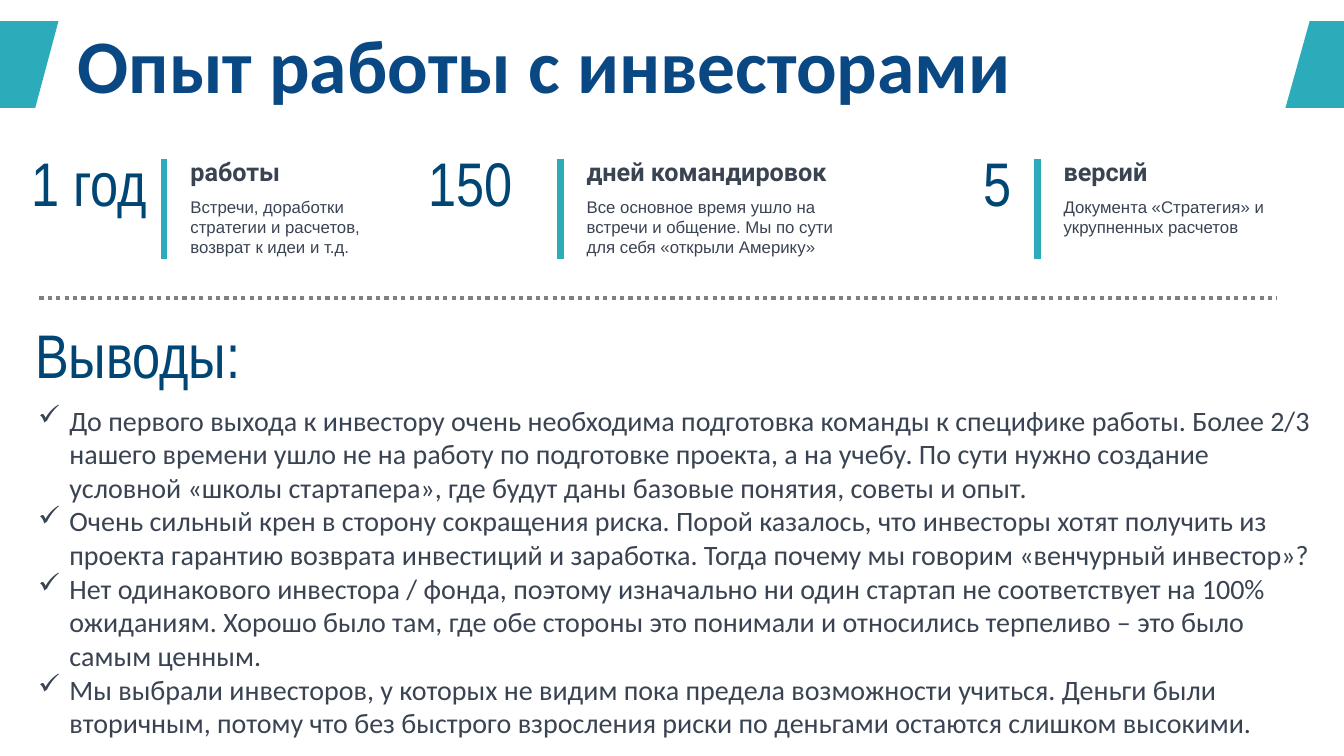
from pptx import Presentation, util as u
from pptx.dml.color import RGBColor
from pptx.enum import dml, shapes, text
from pptx.oxml.ns import qn
from lxml import etree

EMU_PER_PX = 9144
TEAL, NAVY, BLUE, SLATE, GRAY = "2CACBA", "0A4884", "004674", "3A4352", "808080"

STATS = [
    dict(value="1 год", label="работы", left=21, width=165, rule=163, detail_width=228,
         detail="Встречи, доработки стратегии и расчетов, возврат к идеи и т.д."),
    dict(value="150", label="дней командировок", left=415, width=165, rule=556, detail_width=283,
         detail="Все основное время ушло на встречи и общение. "
                "Мы по сути для себя «открыли Америку»"),
    dict(value="5", label="версий", left=887, width=126, rule=1029, detail_width=228,
         detail="Документа «Стратегия» и укрупненных расчетов",
         align=text.PP_ALIGN.RIGHT),
]

CONCLUSIONS = [
    "До первого выхода к инвестору очень необходима подготовка команды к специфике работы. "
    "Более 2/3 нашего времени ушло не на работу по подготовке проекта, а на учебу. "
    "По сути нужно создание условной «школы стартапера», где будут даны базовые понятия, "
    "советы и опыт.",
    "Очень сильный крен в сторону сокращения риска. Порой казалось, что инвесторы хотят "
    "получить из проекта гарантию возврата инвестиций и заработка. "
    "Тогда почему мы говорим «венчурный инвестор»?",
    "Нет одинакового инвестора / фонда, поэтому изначально ни один стартап не соответствует "
    "на 100% ожиданиям. Хорошо было там, где обе стороны это понимали и относились "
    "терпеливо – это было самым ценным.",
    "Мы выбрали инвесторов, у которых не видим пока предела возможности учиться. "
    "Деньги были вторичным, потому что без быстрого взросления риски по деньгами остаются "
    "слишком высокими.",
]


def px(length):
    return u.Emu(length * EMU_PER_PX)


def color(value):
    return RGBColor.from_string(value)


class Slide:
    def __init__(self, deck):
        self.page = deck.slides.add_slide(deck.slide_layouts[5])

    def set_text(self, box, lines, size, font, ink, bold=False, align=text.PP_ALIGN.LEFT):
        frame = box.text_frame
        frame.word_wrap = True
        frame.text = "\n".join(lines)
        for para in frame.paragraphs:
            para.alignment = align
            for span in para.runs:
                span.font.size = u.Pt(size)
                span.font.name = font
                span.font.bold = bold
                span.font.color.rgb = color(ink)
        return box

    def title(self, left, top, width, height, line):
        box = self.page.shapes.title
        box.left, box.top, box.width, box.height = map(px, (left, top, width, height))
        box.text_frame.auto_size = text.MSO_AUTO_SIZE.NONE
        box.text_frame.vertical_anchor = text.MSO_ANCHOR.MIDDLE
        self.set_text(box, [line], 54, "Calibri", NAVY, bold=True)

    def label(self, left, top, width, height, lines, size, font, ink, **style):
        box = self.page.shapes.add_textbox(*map(px, (left, top, width, height)))
        return self.set_text(box, lines, size, font, ink, **style)

    def bullets(self, left, top, width, height, lines, indent):
        box = self.label(left, top, width, height, lines, 20, "Calibri", SLATE)
        for para in box.text_frame.paragraphs:
            props = para._p.get_or_add_pPr()
            props.set("marL", str(px(indent)))
            props.set("indent", str(px(-indent)))
            etree.SubElement(props, qn("a:buChar")).set("char", "✓")

    def line(self, x1, y1, x2, y2, ink, weight, dash=None):
        rule = self.page.shapes.add_connector(
            shapes.MSO_CONNECTOR.STRAIGHT, *map(px, (x1, y1, x2, y2)))
        rule.line.color.rgb = color(ink)
        rule.line.width = u.Pt(weight)
        if dash:
            rule.line.dash_style = dash
        etree.SubElement(rule._element.spPr, qn("a:effectLst"))

    def polygon(self, points, fill):
        start, *rest = points
        builder = self.page.shapes.build_freeform(*start, scale=EMU_PER_PX)
        builder.add_line_segments(rest, close=True)
        shape = builder.convert_to_shape()
        shape.shadow.inherit = False
        shape.fill.solid()
        shape.fill.fore_color.rgb = color(fill)
        shape.line.fill.background()

    def stat(self, value, label, detail, left, width, rule, detail_width,
             align=text.PP_ALIGN.LEFT):
        self.label(left, 139, width, 84, [value], 44, "Arial Narrow", BLUE, align=align)
        self.line(rule, 158, rule, 257, TEAL, 4.5)
        self.label(rule + 16, 150, detail_width + 8, 40, [label], 18, "Roboto", SLATE, bold=True)
        self.label(rule + 16, 190, detail_width, 71, [detail], 12, "Arial", SLATE)


def main():
    deck = Presentation()
    deck.slide_width, deck.slide_height = px(1333), px(750)
    slide = Slide(deck)
    slide.polygon([(0, 21), (58, 21), (35, 107), (0, 107)], TEAL)
    slide.polygon([(1335, 107), (1275, 107), (1299, 21), (1335, 21)], TEAL)
    slide.title(67, 0, 1200, 125, "Опыт работы с инвесторами")
    for stat in STATS:
        slide.stat(**stat)
    slide.line(39, 296, 1267, 296, GRAY, 3, dml.MSO_LINE.ROUND_DOT)
    slide.label(25, 309, 283, 84, ["Выводы:"], 44, "Arial Narrow", BLUE)
    slide.bullets(28, 395, 1295, 347, CONCLUSIONS, 31)
    deck.save("out.pptx")


if __name__ == "__main__":
    main()
